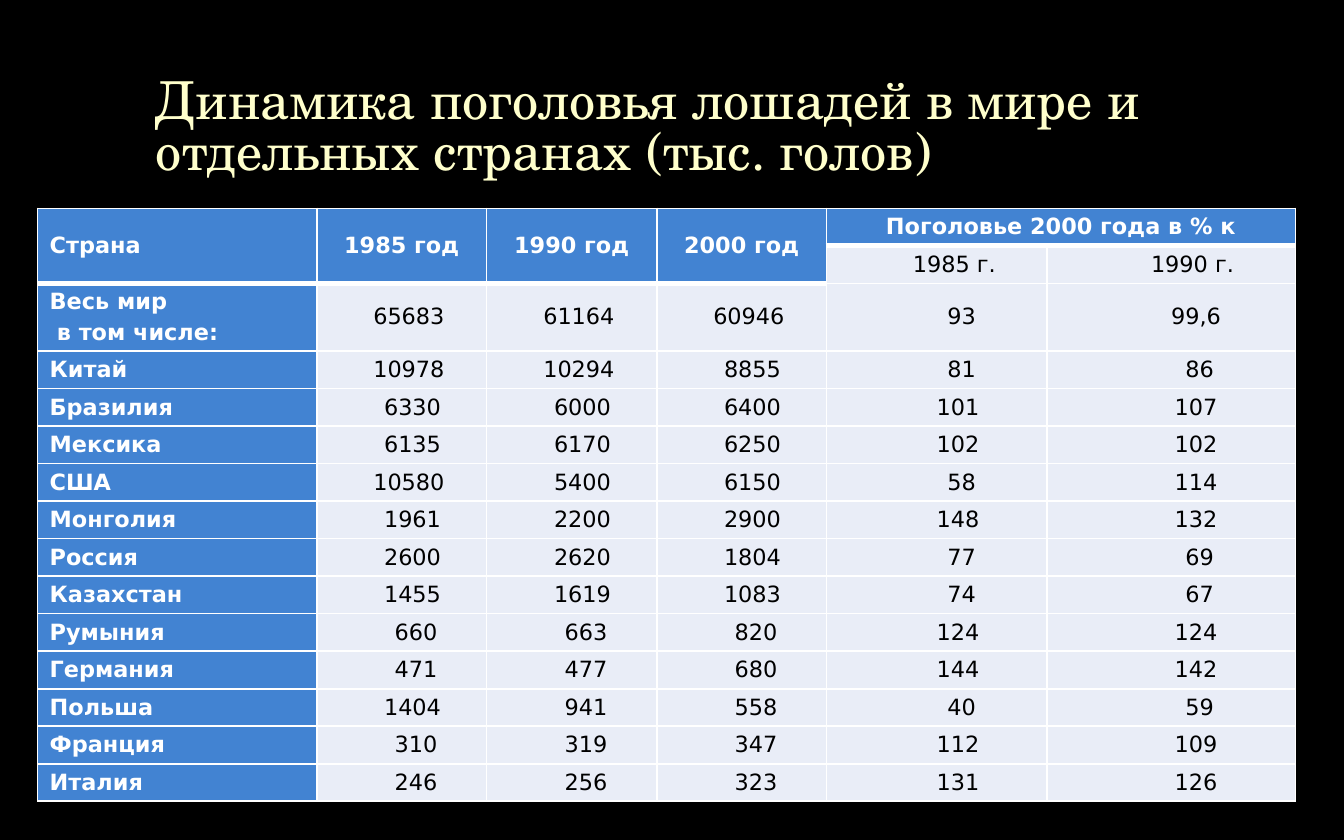
from lxml.etree import SubElement
from pptx import Presentation
from pptx.dml.color import RGBColor
from pptx.enum.text import MSO_ANCHOR as Anchor, MSO_AUTO_SIZE as AutoSize, PP_ALIGN as Align
from pptx.oxml.ns import qn
from pptx.util import Inches, Pt

COLORS = {
    "background": "000000", "title": "FFFFCC", "header": "4283D2",
    "header_text": "FFFFFF", "body": "E9EDF7", "body_text": "000000", "border": "FFFFFF",
}
TITLE_FONT, TABLE_FONT = "TeX Gyre Schola", "DejaVu Sans"
TITLE = "Динамика поголовья лошадей в мире и отдельных странах (тыс. голов)"

COLUMN_WIDTHS = [2.08, 1.26, 1.27, 1.26, 1.64, 1.85]
TABLE_LEFT, TABLE_TOP, TABLE_HEIGHT = 0.28, 1.55, 4.41
WORLD_ROW, WORLD_HEIGHT = 2, 0.5
INDENT_UNIT = 0.053  # half the width of a digit
DIGIT_SLOTS = [7, 7, 7, 9, 10]  # indent plus digit count, per value column

HEADERS = ["Страна", "1985 год", "1990 год", "2000 год", "Поголовье 2000 года в % к"]
SUBHEADERS = [("1985 г.", 5), ("1990 г.", 6)]
HERDS = [
    ("Весь мир\nв том числе:", "65683", "61164", "60946", "93", "99,6"),
    ("Китай", "10978", "10294", "8855", "81", "86"),
    ("Бразилия", "6330", "6000", "6400", "101", "107"),
    ("Мексика", "6135", "6170", "6250", "102", "102"),
    ("США", "10580", "5400", "6150", "58", "114"),
    ("Монголия", "1961", "2200", "2900", "148", "132"),
    ("Россия", "2600", "2620", "1804", "77", "69"),
    ("Казахстан", "1455", "1619", "1083", "74", "67"),
    ("Румыния", "660", "663", "820", "124", "124"),
    ("Германия", "471", "477", "680", "144", "142"),
    ("Польша", "1404", "941", "558", "40", "59"),
    ("Франция", "310", "319", "347", "112", "109"),
    ("Италия", "246", "256", "323", "131", "126"),
]


def color(name):
    return RGBColor.from_string(COLORS[name])


def add_run(paragraph, text, font, size, color_name, bold=False):
    run = paragraph.add_run()
    run.text = text
    run.font.name, run.font.size, run.font.bold = font, Pt(size), bold
    run.font.color.rgb = color(color_name)


def set_indent(paragraph, units):
    properties = paragraph._p.get_or_add_pPr()
    properties.set("marL", str(Inches(units * INDENT_UNIT)))
    properties.set("indent", "0")


def style_cell(cell, role, bottom_width=1):
    """Borders come first: the schema wants them ahead of the fill."""
    properties = cell._tc.get_or_add_tcPr()
    for side in ("lnL", "lnR", "lnT", "lnB"):
        width = bottom_width if side == "lnB" else 1
        line = SubElement(properties, qn(f"a:{side}"), w=str(Pt(width)))
        fill = SubElement(line, qn("a:solidFill"))
        SubElement(fill, qn("a:srgbClr"), val=COLORS["border"])
    cell.fill.solid()
    cell.fill.fore_color.rgb = color(role)
    cell.vertical_anchor = Anchor.MIDDLE
    cell.margin_left = cell.margin_right = Inches(0.09)
    cell.margin_top = cell.margin_bottom = Inches(0.04)


def write_cell(cell, text, role, align=Align.CENTER, indent=0):
    for index, line in enumerate(text.split("\n")):
        frame = cell.text_frame
        paragraph = frame.add_paragraph() if index else frame.paragraphs[0]
        paragraph.alignment = align
        if index:
            paragraph.space_before = Pt(2.4)
        set_indent(paragraph, indent + index)
        add_run(paragraph, line, TABLE_FONT, 12, f"{role}_text", role == "header")


def add_title(slide):
    title = slide.shapes.title
    title.left, title.top = Inches(1.06), Inches(0.35)
    title.width, title.height = Inches(7.88), Inches(1.04)
    frame = title.text_frame
    frame.word_wrap, frame.auto_size = True, AutoSize.NONE
    frame.vertical_anchor = Anchor.BOTTOM
    paragraph = frame.paragraphs[0]
    paragraph.alignment, paragraph.line_spacing = Align.LEFT, 0.8
    add_run(paragraph, TITLE, TITLE_FONT, 28, "title")


def add_grid(slide):
    row_count = len(HERDS) + 2
    table = slide.shapes.add_table(
        row_count, len(COLUMN_WIDTHS), Inches(TABLE_LEFT), Inches(TABLE_TOP),
        Inches(sum(COLUMN_WIDTHS)), Inches(TABLE_HEIGHT)).table
    table.horz_banding = False
    for column, width in zip(table.columns, COLUMN_WIDTHS):
        column.width = Inches(width)
    for row in table.rows:
        row.height = Inches((TABLE_HEIGHT - WORLD_HEIGHT) / (row_count - 1))
    table.rows[WORLD_ROW].height = Inches(WORLD_HEIGHT)
    return table


def fill_header(table):
    for column in range(len(COLUMN_WIDTHS)):
        style_cell(table.cell(0, column), "header", 3)
        if column < 4:
            style_cell(table.cell(1, column), "header", 3)
            table.cell(0, column).merge(table.cell(1, column))
        else:
            style_cell(table.cell(1, column), "body")
    table.cell(0, 4).merge(table.cell(0, 5))
    for column, text in enumerate(HEADERS):
        write_cell(table.cell(0, column), text, "header",
                   Align.CENTER if column else Align.LEFT)
    for column, (text, indent) in enumerate(SUBHEADERS, 4):
        write_cell(table.cell(1, column), text, "body", indent=indent)


def fill_body(table):
    for row, (country, *values) in enumerate(HERDS, WORLD_ROW):
        name_cell = table.cell(row, 0)
        style_cell(name_cell, "header")
        write_cell(name_cell, country, "header", Align.LEFT)
        for column, (value, slots) in enumerate(zip(values, DIGIT_SLOTS), 1):
            cell = table.cell(row, column)
            style_cell(cell, "body")
            digits = len(value.replace(",", ""))
            write_cell(cell, value, "body", indent=slots - digits)


def main():
    presentation = Presentation()
    presentation.slide_width, presentation.slide_height = Inches(10), Inches(6.25)
    slide = presentation.slides.add_slide(presentation.slide_layouts[5])
    slide.background.fill.solid()
    slide.background.fill.fore_color.rgb = color("background")

    add_title(slide)
    # Table: two header rows, then one row per country
    table = add_grid(slide)
    fill_header(table)
    fill_body(table)
    presentation.save("out.pptx")


if __name__ == "__main__":
    main()
